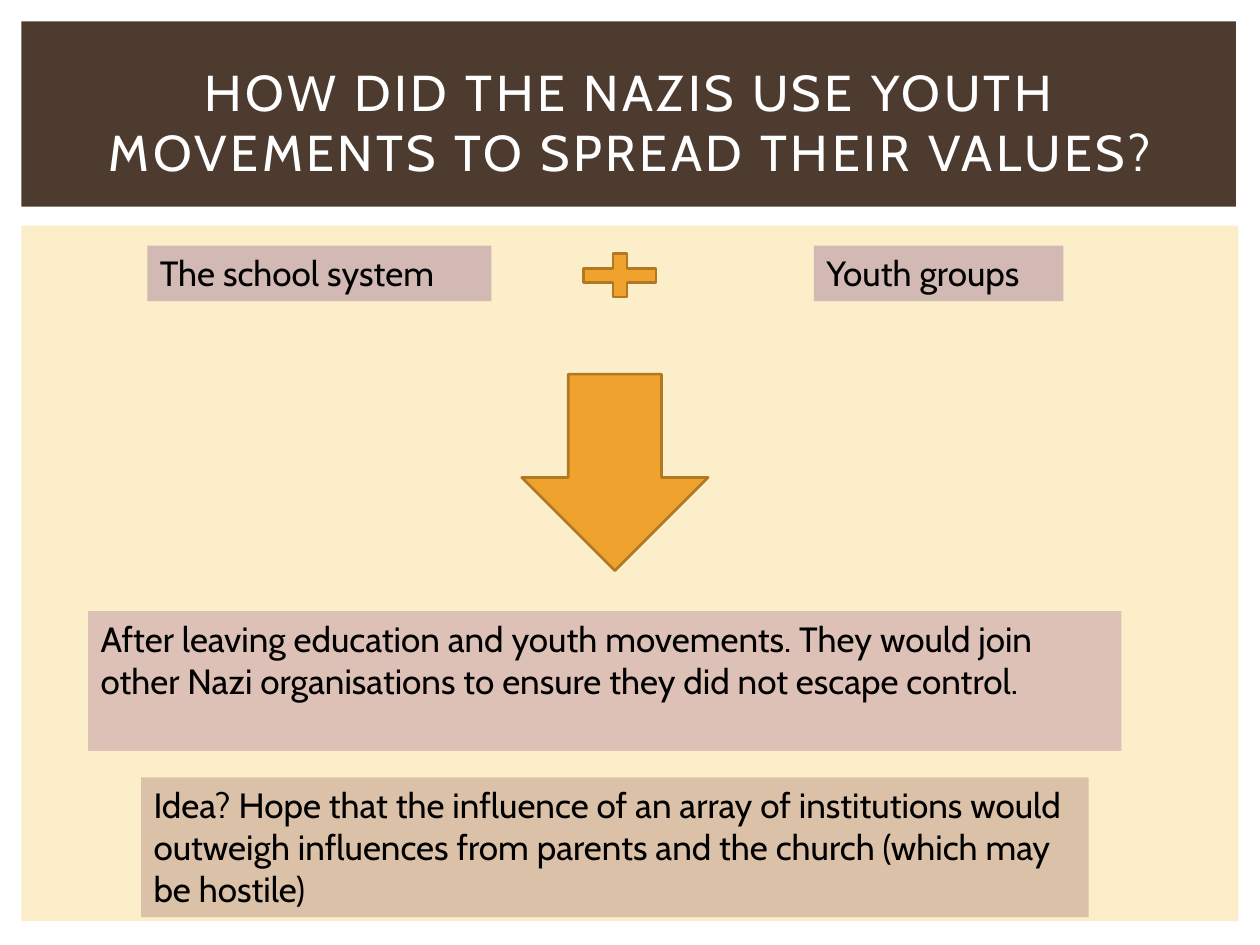
from pptx import Presentation
from pptx import util as u
from pptx.dml import color
from pptx.enum import shapes, text

WIDTH, HEIGHT = u.Inches(10), u.Inches(7.5)
FONT = "Cabin"
GOLD, GOLD_EDGE = "F0A22E", "B27822"
ROSE, PINK, TAN = "D3B9B3", "DDC0B6", "DBC1A7"


def rgb(value):
    return color.RGBColor.from_string(value)


def area(left, top, width, height):
    """Turn percentages of the slide's size into lengths."""
    return [int(share * size / 100) for share, size in
            zip((left, top, width, height), (WIDTH, HEIGHT) * 2)]


def set_font(p, size, hex_color):
    p.font.name = FONT
    p.font.size = u.Pt(size)
    p.font.color.rgb = rgb(hex_color)


def add_figure(slide, kind, box, fill, edge=None):
    sp = slide.shapes.add_shape(kind, *area(*box))
    sp.shadow.inherit = False
    sp.fill.solid()
    sp.fill.fore_color.rgb = rgb(fill)
    if edge:
        sp.line.color.rgb = rgb(edge)
        sp.line.width = u.Pt(1.5)
    else:
        sp.line.fill.background()
    return sp


def add_panel(slide, box, fill):
    return add_figure(slide, shapes.MSO_SHAPE.RECTANGLE, box, fill)


def add_note(slide, box, fill, words):
    tf = add_panel(slide, box, fill).text_frame
    tf.word_wrap = True
    tf.vertical_anchor = text.MSO_ANCHOR.TOP
    p = tf.paragraphs[0]
    p.text = words
    p.alignment = text.PP_ALIGN.LEFT
    set_font(p, 20, "000000")


def set_title(slide, box, words):
    sp = slide.shapes.title
    sp.left, sp.top, sp.width, sp.height = area(*box)
    slide.shapes._spTree.append(sp._element)  # bring in front of the band
    tf = sp.text_frame
    tf.word_wrap = True
    tf.auto_size = text.MSO_AUTO_SIZE.NONE
    tf.vertical_anchor = text.MSO_ANCHOR.MIDDLE
    p = tf.paragraphs[0]
    r = p.add_run()
    r.text = words
    r.font._element.set("spc", "200")  # letter spacing of 2 pt
    p.alignment = text.PP_ALIGN.CENTER
    set_font(p, 28.8, "FFFFFF")


def main():
    prs = Presentation()
    prs.slide_width, prs.slide_height = WIDTH, HEIGHT
    slide = prs.slides.add_slide(prs.slide_layouts.get_by_name("Title Only"))

    # Background panels and title
    add_panel(slide, (1.7, 23.87, 96.6, 73.6), "FBEEC9")
    add_panel(slide, (1.7, 2.27, 96.4, 19.6), "4E3B30")
    set_title(slide, (4.2, 5.2, 91.7, 15.33),
              "HOW DID THE NAZIS USE YOUTH MOVEMENTS TO SPREAD THEIR VALUES?")

    # Two influences, added together
    add_note(slide, (11.7, 26, 27.3, 5.87), ROSE, "The school system")
    add_note(slide, (64.6, 26, 19.8, 5.87), ROSE, "Youth groups")
    plus = add_figure(slide, shapes.MSO_SHAPE.MATH_PLUS,
                      (45.3, 26, 7.8, 6.27), GOLD, GOLD_EDGE)
    plus.adjustments[0] = 0.235

    # Outcome and the idea behind it
    add_figure(slide, shapes.MSO_SHAPE.DOWN_ARROW,
               (41.4, 39.6, 14.8, 20.8), GOLD, GOLD_EDGE)
    add_note(slide, (7, 64.67, 82, 14.8), PINK,
             "After leaving education and youth movements. They would join "
             "other Nazi organisations to ensure they did not escape control.")
    add_note(slide, (11.2, 82.27, 75.2, 14.8), TAN,
             "Idea? Hope that the influence of an array of institutions would "
             "outweigh influences from parents and the church (which may be "
             "hostile)")

    prs.save("out.pptx")


if __name__ == "__main__":
    main()
